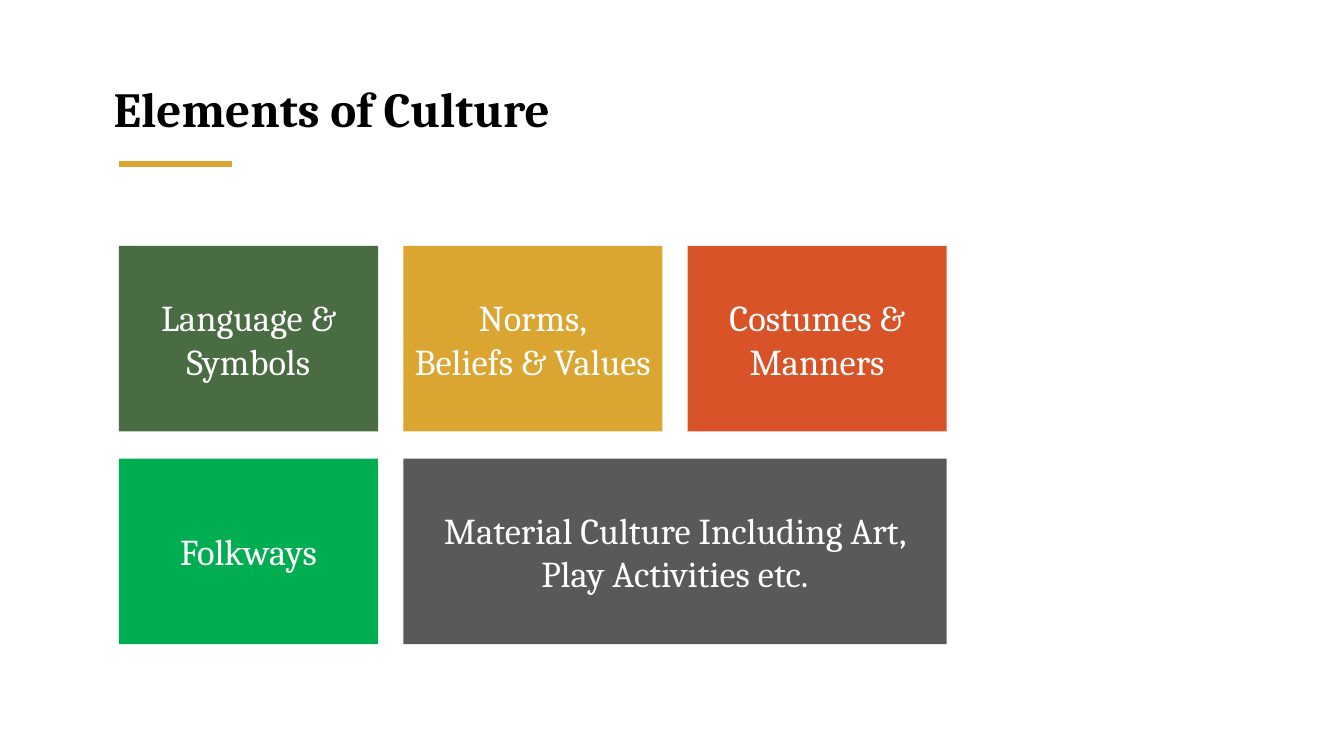
from pptx import Presentation
from pptx.dml.color import RGBColor
from pptx.enum.shapes import MSO_CONNECTOR, MSO_SHAPE
from pptx.enum.text import MSO_ANCHOR, PP_ALIGN
from pptx.oxml.ns import qn
from pptx.util import Inches, Pt
from lxml.etree import SubElement

BLACK = RGBColor(0x00, 0x00, 0x00)
WHITE = RGBColor(0xFF, 0xFF, 0xFF)
MOSS = RGBColor(0x4A, 0x6C, 0x43)
GOLD = RGBColor(0xDA, 0xA5, 0x30)
ORANGE = RGBColor(0xD8, 0x53, 0x27)
GREEN = RGBColor(0x00, 0xAD, 0x50)
GREY = RGBColor(0x59, 0x59, 0x59)
FONT = "Cambria"

TITLE = "Elements of Culture"
# column, row, columns spanned, fill, paragraphs
TILES = [
    (0, 0, 1, MOSS, ["Language & Symbols"]),
    (1, 0, 1, GOLD, ["Norms,", "Beliefs & Values"]),
    (2, 0, 1, ORANGE, ["Costumes & Manners"]),
    (0, 1, 1, GREEN, ["Folkways"]),
    (1, 1, 2, GREY, ["Material Culture Including Art, Play Activities etc."]),
]

LEFT, TOP = 1.18, 2.44
TILE_W, TILE_H = 2.57, 1.84
COL_STEP, ROW_STEP = 2.82, 2.11
RULE_Y, RULE_W = 1.63, 1.12


def add_run(p, text, size, color, bold=False):
    r = p.add_run()
    r.text = text
    r.font.name = FONT
    r.font.size = Pt(size)
    r.font.bold = bold
    r.font.color.rgb = color


def add_title(slide):
    box = slide.shapes.add_textbox(Inches(1.03), Inches(0.73), Inches(6.67), Inches(0.69))
    tf = box.text_frame
    tf.word_wrap = True
    add_run(tf.paragraphs[0], TITLE, 35, BLACK, bold=True)


def add_rule(slide):
    y = Inches(RULE_Y)
    rule = slide.shapes.add_connector(
        MSO_CONNECTOR.STRAIGHT, Inches(LEFT), y, Inches(LEFT + RULE_W), y)
    rule.line.color.rgb = GOLD
    rule.line.width = Pt(4.5)
    SubElement(rule._element.spPr, qn("a:effectLst"))


def add_tile(slide, col, row, span, fill, lines):
    s = slide.shapes.add_shape(
        MSO_SHAPE.RECTANGLE,
        Inches(LEFT + col * COL_STEP), Inches(TOP + row * ROW_STEP),
        Inches(TILE_W + (span - 1) * COL_STEP), Inches(TILE_H))
    s.shadow.inherit = False
    s.fill.solid()
    s.fill.fore_color.rgb = fill
    s.line.fill.background()
    tf = s.text_frame
    tf.word_wrap = True
    tf.vertical_anchor = MSO_ANCHOR.MIDDLE
    for i, line in enumerate(lines):
        p = tf.add_paragraph() if i else tf.paragraphs[0]
        p.alignment = PP_ALIGN.CENTER
        add_run(p, line, 26, WHITE)


def main():
    prs = Presentation()
    prs.slide_width, prs.slide_height = Inches(13.33), Inches(7.5)
    slide = prs.slides.add_slide(prs.slide_layouts[6])
    add_title(slide)
    for tile in TILES:
        add_tile(slide, *tile)
    add_rule(slide)
    prs.save("out.pptx")


if __name__ == "__main__":
    main()
